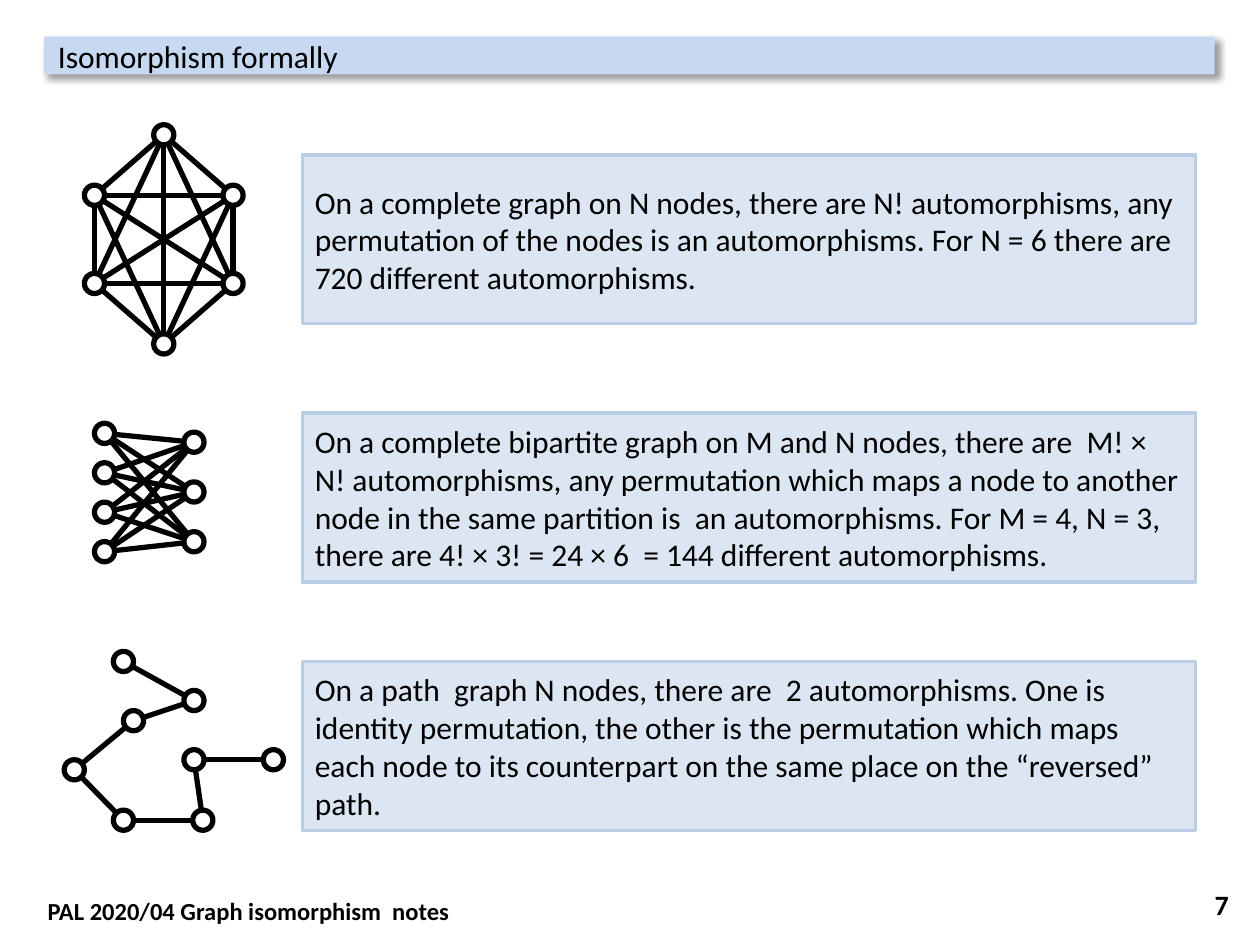
"""Build a slide on the automorphisms of three kinds of graph."""
from dataclasses import dataclass
from itertools import combinations, pairwise, product

from lxml.etree import SubElement as Sub
from pptx import Presentation
from pptx.dml.color import RGBColor as Rgb
from pptx.enum.shapes import MSO_CONNECTOR as Link, MSO_SHAPE as Form
from pptx.enum.text import MSO_ANCHOR as Anchor, PP_ALIGN as Align
from pptx.oxml.ns import qn
from pptx.util import Inches, Pt


@dataclass(frozen=True)
class Theme:
    font: str = "Calibri"
    ink: str = "000000"
    paper: str = "FFFFFF"
    bar: str = "C6D9F1"
    panel: str = "DCE6F2"
    edge: str = "B9CDE5"
    body: int = 18
    page: int = 16
    foot: int = 14
    stroke: int = 3
    frame: int = 2
    node: float = 0.16


def write(shape, text, *, font, size, color, bold=False, align=Align.LEFT,
          anchor=Anchor.MIDDLE, inset=None):
    frame = shape.text_frame
    frame.word_wrap = True
    frame.vertical_anchor = anchor
    if inset is not None:
        frame.margin_left = Inches(inset)
        frame.margin_right = frame.margin_top = frame.margin_bottom = 0
    para = frame.paragraphs[0]
    para.alignment = align
    run = para.add_run()
    run.text = text
    run.font.name = font
    run.font.size = Pt(size)
    run.font.bold = bold
    run.font.color.rgb = Rgb.from_string(color)


class Deck:
    def __init__(self, theme):
        self.theme = theme
        self.show = Presentation()
        self.show.slide_width, self.show.slide_height = Inches(10), Inches(7.5)
        self.slide = self.show.slides.add_slide(self.show.slide_layouts[6])

    def text(self, shape, words, size, **style):
        write(shape, words, font=self.theme.font, size=size, color=self.theme.ink, **style)

    def shape(self, form, box, fill, line=None, width=0):
        item = self.slide.shapes.add_shape(form, *map(Inches, box))
        item.shadow.inherit = False
        item.fill.solid()
        item.fill.fore_color.rgb = Rgb.from_string(fill)
        if line:
            item.line.color.rgb = Rgb.from_string(line)
            item.line.width = Pt(width)
        else:
            item.line.fill.background()
        return item

    def title(self, words, box):
        bar = self.shape(Form.RECTANGLE, box, self.theme.bar)
        cast = Sub(bar.element.spPr.find(qn("a:effectLst")), qn("a:outerShdw"),
                   blurRad=str(Pt(4)), dist=str(Pt(3)), dir=str(45 * 60000),
                   algn="tl", rotWithShape="0")
        tone = Sub(cast, qn("a:srgbClr"), val=self.theme.ink)
        Sub(tone, qn("a:alpha"), val="40000")
        self.text(bar, words, self.theme.body, inset=0.11)

    def panel(self, words, top):
        box = self.shape(Form.RECTANGLE, (2.4, top, 7.09, 1.34), self.theme.panel,
                         self.theme.edge, self.theme.frame)
        self.text(box, words, self.theme.body)

    def label(self, words, box, size, **style):
        item = self.slide.shapes.add_textbox(*map(Inches, box))
        self.text(item, words, size, bold=True, **style)

    def edge(self, start, end):
        line = self.slide.shapes.add_connector(Link.STRAIGHT, *map(Inches, start + end))
        line.line.color.rgb = Rgb.from_string(self.theme.ink)
        line.line.width = Pt(self.theme.stroke)
        Sub(line.element.spPr, qn("a:effectLst"))

    def node(self, x, y):
        size = self.theme.node
        self.shape(Form.OVAL, (x - size / 2, y - size / 2, size, size),
                   self.theme.paper, self.theme.ink, self.theme.stroke)

    def graph(self, nodes, edges):
        for start, end in edges:
            self.edge(start, end)
        for spot in nodes:
            self.node(*spot)


def main():
    theme = Theme()
    deck = Deck(theme)
    deck.title("Isomorphism formally", (0.35, 0.29, 9.29, 0.3))
    deck.label("7", (7.52, 6.98, 2.33, 0.4), theme.page, align=Align.RIGHT)
    deck.label("PAL 2020/04 Graph isomorphism  notes", (0.28, 7.06, 9.37, 0.34),
               theme.foot, anchor=Anchor.TOP)

    notes = [
        (1.23, "On a complete graph on N nodes, there are N! automorphisms, any "
               "permutation of the nodes is an automorphisms. For N = 6 there are "
               "720 different automorphisms."),
        (3.28, "On a complete bipartite graph on M and N nodes, there are  M! × N! "
               "automorphisms, any permutation which maps a node to another node in "
               "the same partition is  an automorphisms. For M = 4, N = 3, there are "
               "4! × 3! = 24 × 6  = 144 different automorphisms."),
        (5.25, "On a path  graph N nodes, there are  2 automorphisms. One is identity "
               "permutation, the other is the permutation which maps each node to its "
               "counterpart on the same place on the “reversed” path."),
    ]
    for top, words in notes:
        deck.panel(words, top)

    ring = [(1.3, 1.07), (1.85, 1.55), (1.85, 2.25),
            (1.3, 2.73), (0.75, 2.25), (0.75, 1.55)]
    deck.graph(ring, combinations(ring, 2))

    left = [(0.83, 3.44 + 0.313 * row) for row in range(4)]
    right = [(1.54, 3.51 + 0.395 * row) for row in range(3)]
    deck.graph(left + right, product(left, right))

    trail = [(0.98, 5.25), (1.54, 5.56), (1.06, 5.72), (0.59, 6.11),
             (0.98, 6.51), (1.61, 6.51), (1.54, 6.03), (2.17, 6.03)]
    deck.graph(trail, pairwise(trail))
    deck.show.save("out.pptx")


if __name__ == "__main__":
    main()
